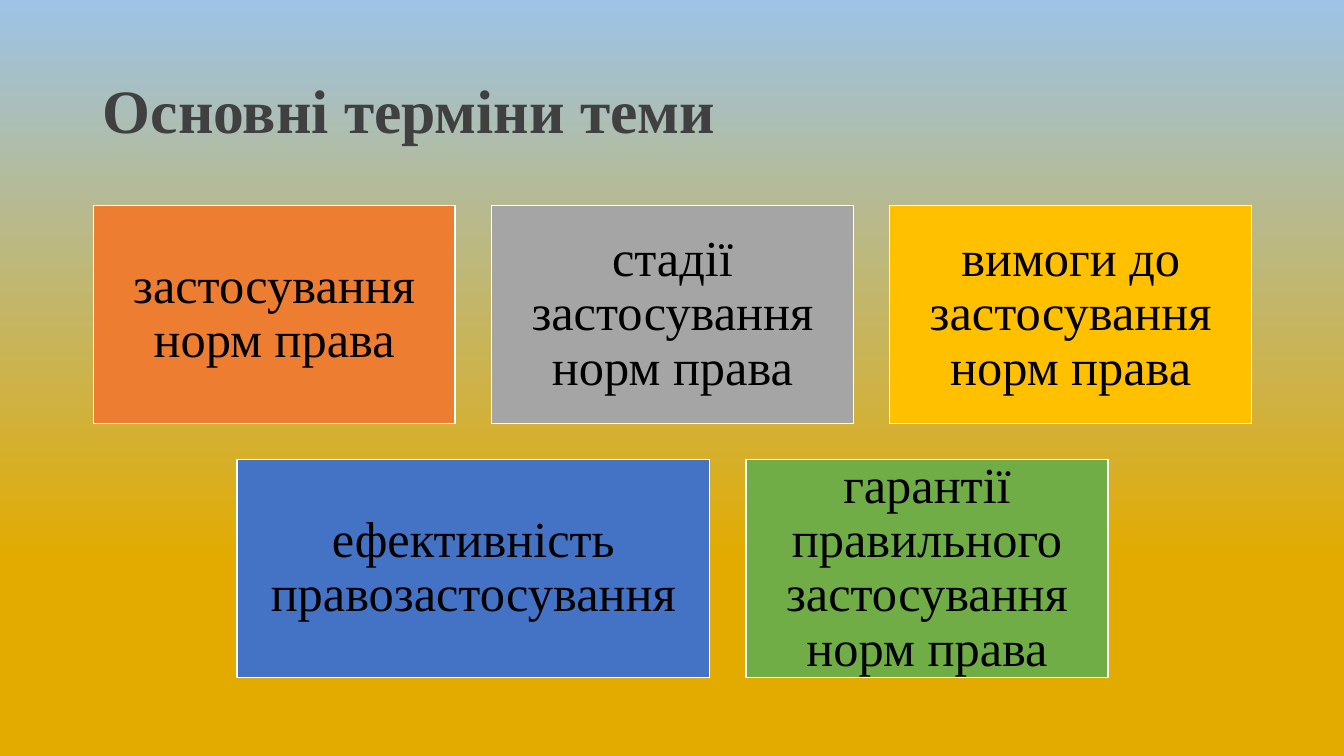
from dataclasses import dataclass

from pptx import Presentation
from pptx.dml.color import RGBColor
from pptx.enum import shapes, text
from pptx.util import Inches, Pt


@dataclass(frozen=True)
class Theme:
    font: str = "Times New Roman"
    title_size: int = 44
    card_size: int = 36
    title_color: str = "404040"
    card_text: str = "000000"
    outline: str = "FFFFFF"
    ground: str = "E3AB00"
    sky: str = "9DC3E6"
    orange: str = "ED7D31"
    gray: str = "A5A5A5"
    yellow: str = "FFC000"
    blue: str = "4472C4"
    green: str = "70AD47"


class PageBuilder:
    def __init__(self, page, theme):
        self.page = page
        self.theme = theme

    def background(self):
        fill = self.page.background.fill
        fill.gradient()
        fill.gradient_angle = 90
        stops = ((0.26, self.theme.ground), (1, self.theme.sky))
        for stop, (position, color) in zip(fill.gradient_stops, stops):
            stop.position = position
            stop.color.rgb = RGBColor.from_string(color)

    def set_words(self, box, words, size, color, align, bold=False, inset=None):
        frame = box.text_frame
        frame.text = words
        frame_format = {
            "word_wrap": True,
            "auto_size": text.MSO_AUTO_SIZE.NONE,
            "vertical_anchor": text.MSO_ANCHOR.MIDDLE,
        }
        if inset is not None:
            for side in ("left", "top", "right", "bottom"):
                frame_format[f"margin_{side}"] = Inches(inset)
        para = frame.paragraphs[0]
        span = para.runs[0]
        para_format = {"alignment": align, "line_spacing": 0.9}
        font_format = {"name": self.theme.font, "size": Pt(size), "bold": bold}
        for target, values in ((frame, frame_format), (para, para_format),
                               (span.font, font_format)):
            for name, value in values.items():
                setattr(target, name, value)
        span.font.color.rgb = RGBColor.from_string(color)

    def title(self, words, left, top, width, height):
        box = self.page.shapes.title
        place = {"left": left, "top": top, "width": width, "height": height}
        for name, value in place.items():
            setattr(box, name, Inches(value))
        self.set_words(box, words, self.theme.title_size, self.theme.title_color,
                       text.PP_ALIGN.LEFT, bold=True)

    def card(self, words, color, left, top, width, height):
        box = self.page.shapes.add_shape(
            shapes.MSO_SHAPE.RECTANGLE,
            *(Inches(value) for value in (left, top, width, height)))
        box.shadow.inherit = False
        box.fill.solid()
        box.fill.fore_color.rgb = RGBColor.from_string(color)
        box.line.color.rgb = RGBColor.from_string(self.theme.outline)
        box.line.width = Pt(1)
        self.set_words(box, words, self.theme.card_size, self.theme.card_text,
                       text.PP_ALIGN.CENTER, inset=0.15)

    def card_row(self, cards, top, height, gap, center):
        total = sum(width for _, _, width in cards) + gap * (len(cards) - 1)
        left = center - total / 2
        for words, color, width in cards:
            self.card(words, color, left, top, width, height)
            left += width + gap


def main():
    # Deck and page
    deck = Presentation()
    deck.slide_width, deck.slide_height = Inches(13.33), Inches(7.5)
    theme = Theme()
    builder = PageBuilder(deck.slides.add_slide(deck.slide_layouts[5]), theme)
    builder.background()

    # Title
    builder.title("Основні терміни теми", 0.92, 0.4, 11.5, 1.45)

    # Centred rows of term cards
    narrow, wide, height, gap = 3.59, 4.69, 2.16, 0.36
    rows = [
        [("застосування норм права", theme.orange, narrow),
         ("стадії застосування норм права", theme.gray, narrow),
         ("вимоги до застосування норм права", theme.yellow, narrow)],
        [("ефективність правозастосування", theme.blue, wide),
         ("гарантії правильного застосування норм права", theme.green, narrow)],
    ]
    for index, cards in enumerate(rows):
        builder.card_row(cards, 2.04 + index * (height + gap), height, gap, 6.67)

    deck.save("out.pptx")


if __name__ == "__main__":
    main()
